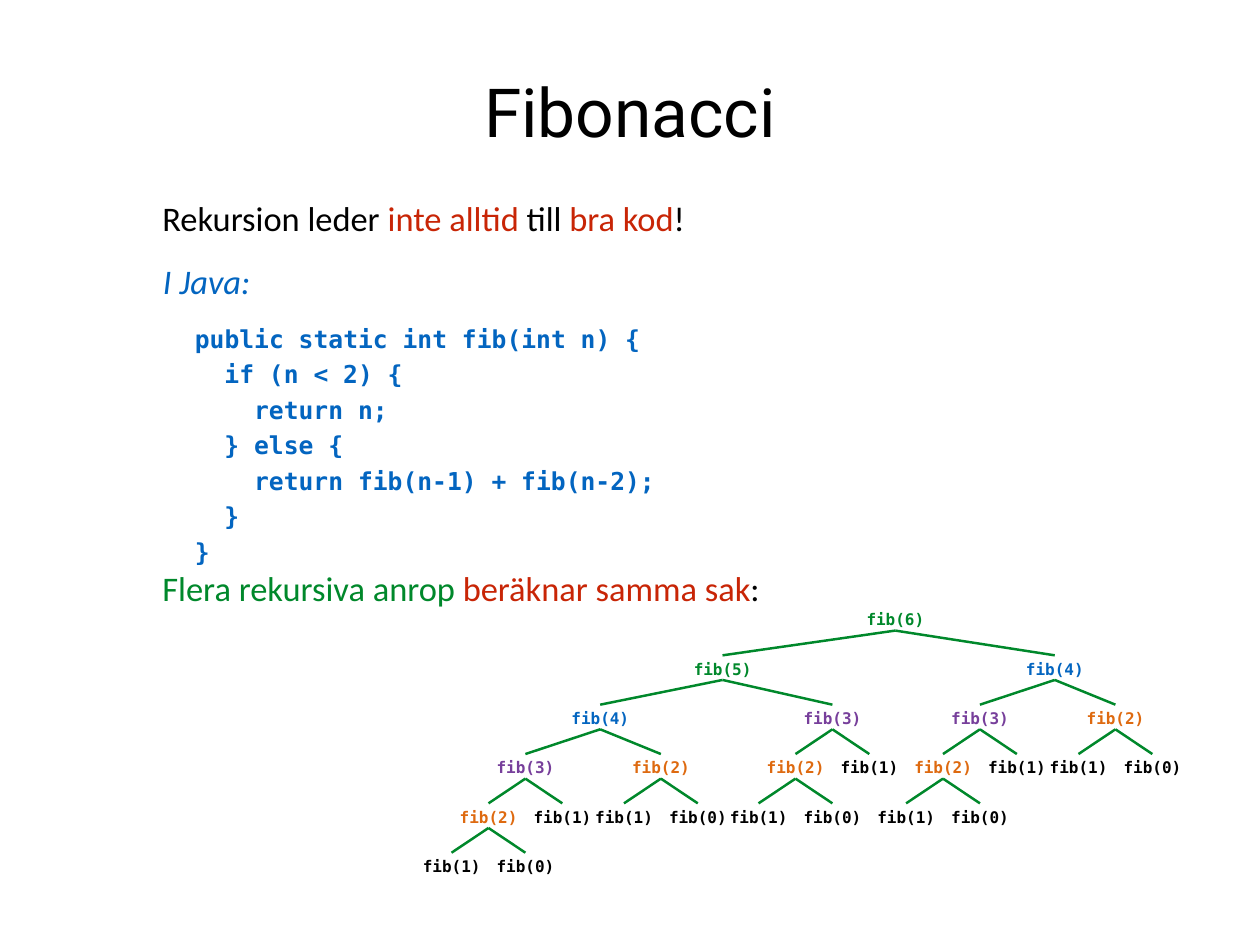
"""Builds the Fibonacci slide with its recursion tree."""
from lxml.etree import SubElement
from pptx import Presentation
from pptx.dml.color import RGBColor
from pptx.enum.shapes import MSO_CONNECTOR as Connector
from pptx.enum.text import MSO_ANCHOR as Anchor, MSO_AUTO_SIZE as AutoSize, PP_ALIGN as Align
from pptx.oxml.ns import qn
from pptx.util import Pt

COLORS = {"black": "000000", "red": "C82506", "blue": "0365C0",
          "green": "00882B", "purple": "773F9B", "orange": "DE6A10"}
CALL_COLORS = {6: "green", 5: "green", 4: "blue", 3: "purple",
               2: "orange", 1: "black", 0: "black"}
SPREADS = {6: (-140.4, 129.6), 5: (-99.4, 89.3), 4: (-60.8, 49.3),
           3: (-30, 30), 2: (-30, 30)}
CODE = [(0, "public static int fib(int n) {"), (1, "if (n < 2) {"),
        (2, "return n;"), (1, "} else {"),
        (2, "return fib(n-1) + fib(n-2);"), (1, "}"), (0, "}")]
CODE_INDENT = 24.08
LEVEL_STEP = 40.1
CALL_WIDTH, CALL_HEIGHT = 110, 20


class FibonacciSlide:
    """Holds the fonts, the colours and the current page."""

    sans, mono, display = "Calibri", "DejaVu Sans Mono", "Roboto"

    def __init__(self, deck):
        """Add a title-only page to the deck."""
        self.page = deck.slides.add_slide(deck.slide_layouts[5])

    def format_span(self, span, font, size, color, bold=False, italic=False):
        """Set the font of one run."""
        span.font.name = font
        span.font.size = Pt(size)
        span.font.bold = bold
        span.font.italic = italic
        span.font.color.rgb = RGBColor.from_string(COLORS[color])

    def format_frame(self, frame, anchor=Anchor.TOP):
        """Give a text frame no insets, wrapping and a fixed size."""
        frame.margin_left = frame.margin_right = 0
        frame.margin_top = frame.margin_bottom = 0
        frame.word_wrap = True
        frame.auto_size = AutoSize.NONE
        frame.vertical_anchor = anchor

    def add_box(self, left, top, width, height):
        """Add a bare text box."""
        box = self.page.shapes.add_textbox(Pt(left), Pt(top), Pt(width), Pt(height))
        self.format_frame(box.text_frame)
        return box

    def add_title(self, text, left, top, width, height):
        """Fill and place the title placeholder."""
        title = self.page.shapes.title
        title.left, title.top = Pt(left), Pt(top)
        title.width, title.height = Pt(width), Pt(height)
        title.text_frame.text = text
        self.format_frame(title.text_frame, Anchor.MIDDLE)
        para = title.text_frame.paragraphs[0]
        para.alignment = Align.CENTER
        self.format_span(para.runs[0], self.display, 55, "black")

    def add_sentence(self, parts, left, top, italic=False):
        """Add one line of text made of coloured parts."""
        para = self.add_box(left, top, 604, 40.5).text_frame.paragraphs[0]
        for text, color in parts:
            span = para.add_run()
            span.text = text
            self.format_span(span, self.sans, 28, color, italic=italic)

    def add_code(self, lines, left, top, width, height):
        """Add a code listing with one indented paragraph per line."""
        frame = self.add_box(left, top, width, height).text_frame
        frame.text = "\n".join(text for _, text in lines)
        for para, (depth, _) in zip(frame.paragraphs, lines):
            para.line_spacing = 1.2
            properties = para._p.get_or_add_pPr()
            properties.set("marL", str(Pt(depth * CODE_INDENT)))
            properties.set("indent", "0")
            self.format_span(para.runs[0], self.mono, 20, "blue", bold=True)

    def add_branch(self, parent, child):
        """Join the bottom of a call to the top of the call it makes."""
        branch = self.page.shapes.add_connector(Connector.STRAIGHT, 0, 0, 0, 0)
        branch.begin_connect(parent, 2)
        branch.end_connect(child, 0)
        branch.line.color.rgb = RGBColor.from_string(COLORS["green"])
        branch.line.width = Pt(2)
        SubElement(branch._element.spPr, qn("a:effectLst"))

    def add_call(self, number, center, top):
        """Add a call with every call below it, and return its box."""
        box = self.add_box(center - CALL_WIDTH / 2, top, CALL_WIDTH, CALL_HEIGHT)
        box.text_frame.text = f"fib({number})"
        para = box.text_frame.paragraphs[0]
        para.alignment = Align.CENTER
        para.line_spacing = 1.2
        self.format_span(para.runs[0], self.mono, 13, CALL_COLORS[number], bold=True)
        for step, offset in enumerate(SPREADS.get(number, ()), start=1):
            child = self.add_call(number - step, center + offset, top + LEVEL_STEP)
            self.add_branch(box, child)
        return box


def main():
    """Build and save the deck."""
    deck = Presentation()
    deck.slide_width, deck.slide_height = Pt(1024), Pt(768)
    slide = FibonacciSlide(deck)
    slide.add_title("Fibonacci", 5, 5, 1014, 170)
    slide.add_sentence([("Rekursion leder ", "black"), ("inte alltid ", "red"),
                        ("till", "black"), (" bra kod", "red"), ("!", "black")],
                       132, 160.5)
    slide.add_sentence([("I Java:", "blue")], 132.5, 211, italic=True)
    slide.add_code(CODE, 158.4, 258.5, 847.5, 216)
    slide.add_sentence([("Flera rekursiva anrop ", "green"),
                        ("beräknar samma sak", "red"), (":", "black")], 132, 461)
    slide.add_call(6, 727.6, 492.5)
    deck.save("out.pptx")


if __name__ == "__main__":
    main()
